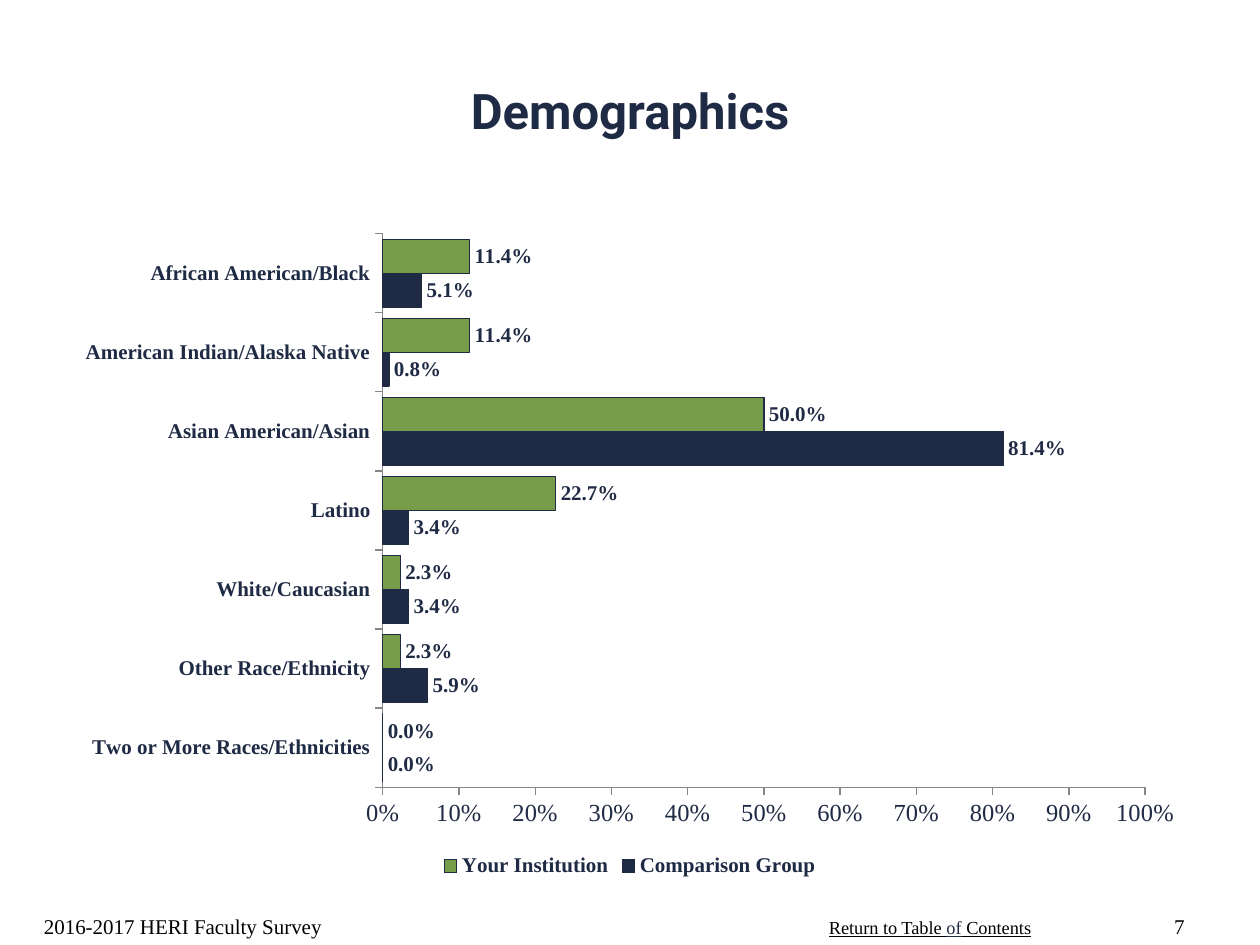
from pptx import Presentation
from pptx.chart.data import CategoryChartData
from pptx.dml.color import RGBColor
from pptx.enum.chart import (XL_CHART_TYPE, XL_LABEL_POSITION,
                             XL_LEGEND_POSITION, XL_TICK_MARK)
from pptx.enum.text import MSO_ANCHOR, PP_ALIGN
from pptx.util import Inches, Pt

LEFT, CENTER, RIGHT = PP_ALIGN.LEFT, PP_ALIGN.CENTER, PP_ALIGN.RIGHT
MIDDLE, BOTTOM, TOP = MSO_ANCHOR.MIDDLE, MSO_ANCHOR.BOTTOM, MSO_ANCHOR.TOP
OUTSIDE = XL_TICK_MARK.OUTSIDE

# Content
NAVY, GREEN, BLACK, GRAY = "1F2A44", "789D4A", "000000", "868686"
SERIF, SANS = "Times New Roman", "Roboto"
TITLE = "Demographics"
SERIES = [("Comparison Group", NAVY), ("Your Institution", GREEN)]
ROWS = [  # category, comparison group, your institution
    ("Two or More Races/Ethnicities", 0, 0),
    ("Other Race/Ethnicity", 0.059, 0.023),
    ("White/Caucasian", 0.034, 0.023),
    ("Latino", 0.034, 0.227),
    ("Asian American/Asian", 0.814, 0.5),
    ("American Indian/Alaska Native", 0.008, 0.114),
    ("African American/Black", 0.051, 0.114),
]
LINK = [("Return to Table ", BLACK), ("of", NAVY), (" Contents", BLACK)]
FOOTERS = [  # runs, position, size, alignment, anchor, underline, wrap
    (LINK, (6.48, 7.22, 1.82, 0.28), 10.5, LEFT, TOP, True, False),
    ([("2016-2017 HERI Faculty Survey", BLACK)], (0.25, 7, 3.17, 0.5),
     12, LEFT, BOTTOM, False, True),
    ([("7", BLACK)], (9, 7, 0.5, 0.5), 12, RIGHT, BOTTOM, False, True),
]


def color(value):
    return RGBColor.from_string(value)


def style(font, size, tint=NAVY, name=SERIF, bold=False):
    font.size, font.name, font.bold = Pt(size), name, bold
    font.color.rgb = color(tint)


def inches(position):
    return [Inches(length) for length in position]


def add_title(page):
    title = page.shapes.title
    title.left, title.top, title.width, title.height = inches((0, 0.25, 10, 1.25))
    frame = title.text_frame
    frame.text = TITLE
    frame.vertical_anchor = MIDDLE
    para = frame.paragraphs[0]
    para.alignment = CENTER
    style(para.runs[0].font, 28, name=SANS, bold=True)


def add_footer(page, spans, position, size, alignment, anchor, underline, wrap):
    frame = page.shapes.add_textbox(*inches(position)).text_frame
    frame.word_wrap, frame.vertical_anchor = wrap, anchor
    para = frame.paragraphs[0]
    para.alignment = alignment
    for text, tint in spans:
        span = para.add_run()
        span.text = text
        style(span.font, size, tint)
        span.font.underline = underline


def add_chart(page):
    names, *columns = zip(*ROWS)
    data = CategoryChartData()
    data.categories = names
    for (name, _), values in zip(SERIES, columns):
        data.add_series(name, values)
    chart = page.shapes.add_chart(XL_CHART_TYPE.BAR_CLUSTERED,
                                  *inches((0.5, 1.75, 9, 5.25)), data).chart
    chart.has_title = False
    style(chart.font, 14)

    # Bars and their labels
    plot = chart.plots[0]
    plot.gap_width, plot.overlap, plot.vary_by_categories = 34, 0, False
    for series, (_, tint) in zip(plot.series, SERIES):
        series.invert_if_negative = False
        series.format.fill.solid()
        series.format.fill.fore_color.rgb = color(tint)
        series.format.line.color.rgb = color(NAVY)
        series.format.line.width = Pt(0.75)
        labels = series.data_labels
        labels.show_value = True
        labels.number_format, labels.number_format_is_linked = "0.0%", False
        labels.position = XL_LABEL_POSITION.OUTSIDE_END
        style(labels.font, 12, bold=True)

    # Axes
    for axis, size, bold in ((chart.category_axis, 12, True),
                             (chart.value_axis, 14, False)):
        axis.has_major_gridlines = False
        axis.major_tick_mark = OUTSIDE
        axis.format.line.color.rgb = color(GRAY)
        style(axis.tick_labels.font, size, bold=bold)
    scale = chart.value_axis
    scale.minimum_scale, scale.maximum_scale, scale.major_unit = 0, 1, 0.1
    scale.tick_labels.number_format = "0%"
    scale.tick_labels.number_format_is_linked = False

    # Legend
    chart.has_legend = True
    chart.legend.position = XL_LEGEND_POSITION.BOTTOM
    chart.legend.include_in_layout = False
    style(chart.legend.font, 12, bold=True)


def main():
    deck = Presentation()
    deck.slide_width, deck.slide_height = inches((10, 7.5))
    page = deck.slides.add_slide(deck.slide_layouts[5])
    add_title(page)
    add_chart(page)
    for footer in FOOTERS:
        add_footer(page, *footer)
    deck.save("out.pptx")


if __name__ == "__main__":
    main()
